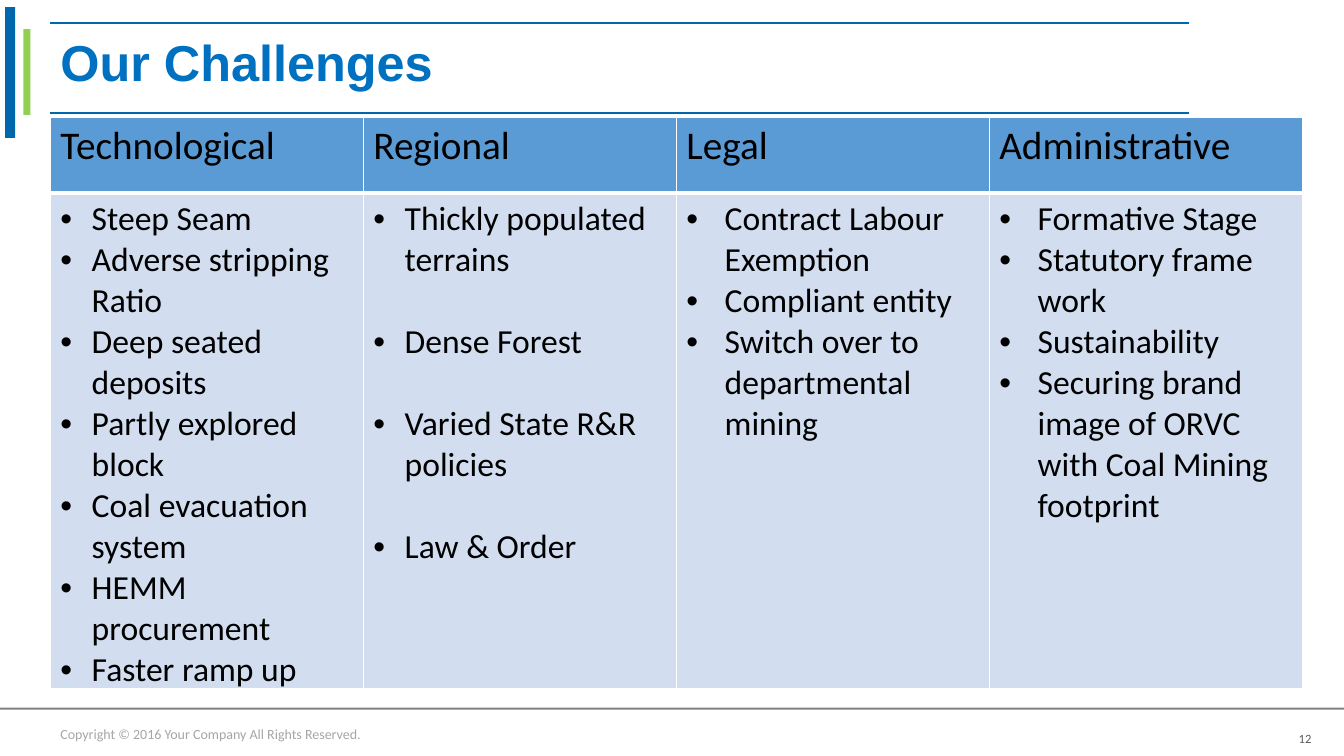
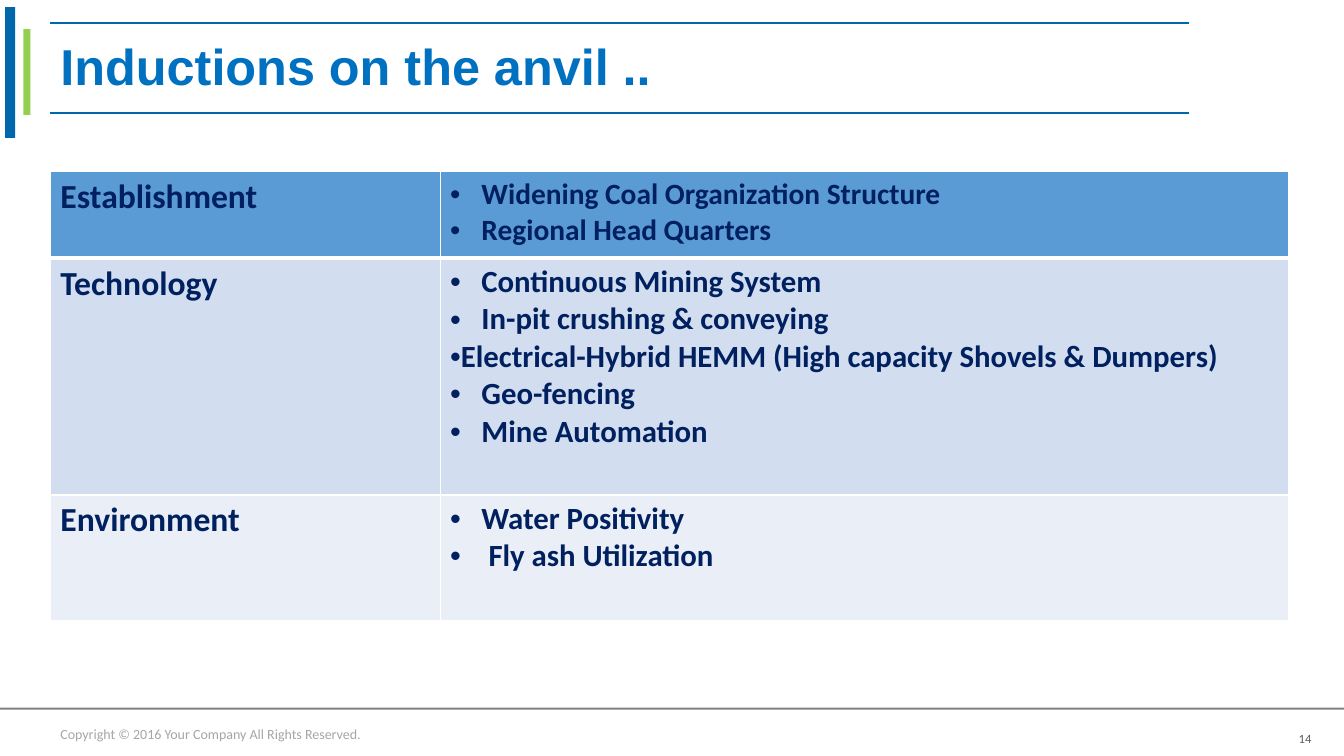
from lxml import etree
from pptx import Presentation, util as u
from pptx.dml.color import RGBColor
from pptx.enum import shapes, text
from pptx.oxml import ns

COLORS = {
    "blue": "0067AC", "green": "92D050", "rule": "808080", "title": "0070C0",
    "copyright": "A6A6A6", "number": "595959", "black": "000000", "navy": "002060",
    "white": "FFFFFF", "header": "5B9BD5", "band1": "D2DEEF", "band2": "EAEFF7",
}
RGB = {name: RGBColor.from_string(value) for name, value in COLORS.items()}
ROW_FILLS = ["header", "band1", "band2"]
LEFT = 3.75  # shared left margin, percent of slide width

prs = Presentation()
prs.slide_width, prs.slide_height = u.Inches(13.33), u.Inches(7.5)


def place(x, y, w, h):
    """Turn percentages of the slide's width and height into lengths."""
    W, H = prs.slide_width, prs.slide_height
    return [int(share * side / 100) for share, side in zip((x, y, w, h), (W, H, W, H))]


def style(p, font, size, color, bold=False):
    """Format every run of a paragraph."""
    for r in p.runs:
        r.font.name, r.font.size, r.font.bold = font, u.Pt(size), bold
        r.font.color.rgb = RGB[color]


# Shared decoration: percent boxes and colours
BARS = [
    ((1.73, 3.87, 0.53, 11.33), "green"),
    ((0.38, 0.93, 0.75, 17.33), "blue"),
    ((0, 93.6, 100, 0.27), "rule"),
]
TITLE_RULES = [3.07, 14.93]

# Hanging indents in inches; a cell is (text size, indent, space before, lines)
NARROW, WIDE = 0.31, 0.38
MARGINS = {"Electrical-Hybrid HEMM (High capacity Shovels & Dumpers)": (0.06, NARROW),
           "Fly ash Utilization": (WIDE, WIDE)}

SLIDES = [
    {
        "title": "Our Challenges", "title_top": 3.47, "number": "12",
        "top": 15.47, "cols": [93.15 / 4] * 4, "rows": [10.1, 65.5],
        "color": "black", "bold": False,
        "cells": [
            [(28, 0, 0, [name]) for name in
             ("Technological", "Regional", "Legal", "Administrative")],
            [
                (24, NARROW, 0, ["Steep Seam", "Adverse stripping Ratio",
                                 "Deep seated deposits", "Partly explored block",
                                 "Coal evacuation system", "HEMM procurement",
                                 "Faster ramp up"]),
                (24, NARROW, 29.3, ["Thickly populated terrains", "Dense Forest",
                                    "Varied State R&R policies", "Law & Order"]),
                (24, WIDE, 0, ["Contract Labour Exemption", "Compliant entity",
                               "Switch over to departmental mining"]),
                (24, WIDE, 0, ["Formative Stage", "Statutory frame work",
                               "Sustainability",
                               "Securing brand image of ORVC with Coal Mining footprint"]),
            ],
        ],
    },
    {
        "title": "Inductions on the anvil ..", "title_top": 4, "number": "14",
        "top": 22.67, "cols": [29, 63.1], "rows": [11.47, 31.33, 16.67],
        "color": "navy", "bold": True,
        "cells": [
            [(24, 0, 0, ["Establishment"]),
             (21, NARROW, 0, ["Widening Coal Organization Structure",
                              "Regional Head Quarters"])],
            [(24, 0, 0, ["Technology"]),
             (22, NARROW, 0, ["Continuous Mining System", "In-pit crushing & conveying",
                              "Electrical-Hybrid HEMM (High capacity Shovels & Dumpers)",
                              "Geo-fencing", "Mine Automation"])],
            [(24, 0, 0, ["Environment"]),
             (22, NARROW, 0, ["Water Positivity", "Fly ash Utilization"])],
        ],
    },
]

for page in SLIDES:
    s = prs.slides.add_slide(prs.slide_layouts[5])

    # Bars and rules
    for box, color in BARS:
        sp = s.shapes.add_shape(shapes.MSO_SHAPE.RECTANGLE, *place(*box))
        sp.shadow.inherit = False
        sp.fill.solid()
        sp.fill.fore_color.rgb = RGB[color]
        sp.line.fill.background()
    for y in TITLE_RULES:
        line = s.shapes.add_connector(shapes.MSO_CONNECTOR.STRAIGHT,
                                      *place(LEFT, y, 88.5, y))
        line.line.color.rgb, line.line.width = RGB["blue"], u.Pt(1.5)
        etree.SubElement(line._element.spPr, ns.qn("a:effectLst"))

    # Title
    sp = s.shapes.title
    sp.left, sp.top, sp.width, sp.height = place(LEFT, page["title_top"], 84.7, 10.27)
    tf = sp.text_frame
    tf.text = page["title"]
    tf.vertical_anchor = text.MSO_ANCHOR.MIDDLE
    p = tf.paragraphs[0]
    p.alignment, p.line_spacing = text.PP_ALIGN.LEFT, 0.9
    style(p, "Arial", 36, "title", True)

    # Footer: copyright line and page number
    tf = s.shapes.add_textbox(*place(LEFT, 95.33, 93.9, 3.6)).text_frame
    tf.word_wrap, tf.vertical_anchor = True, text.MSO_ANCHOR.MIDDLE
    tf.text = "Copyright © 2016 Your Company All Rights Reserved."
    style(tf.paragraphs[0], "Calibri", 10, "copyright")

    tf = s.shapes.add_textbox(*place(93.45, 95.6, 4.13, 3.33)).text_frame
    tf.word_wrap = True
    tf.margin_left = tf.margin_top = u.Inches(0.08)
    tf.margin_right = tf.margin_bottom = 0
    tf.text = page["number"]
    tf.paragraphs[0].alignment = text.PP_ALIGN.RIGHT
    style(tf.paragraphs[0], "Calibri", 9, "number")

    # Table grid
    cols, rows = page["cols"], page["rows"]
    table = s.shapes.add_table(len(rows), len(cols), *place(
        LEFT, page["top"], sum(cols), sum(rows))).table
    table.first_row = table.horz_banding = False
    for col, share in zip(table.columns, cols):
        col.width = place(0, 0, share, 0)[2]
    for row, share in zip(table.rows, rows):
        row.height = place(0, 0, 0, share)[3]

    for i, row in enumerate(page["cells"]):
        for j, (size, indent, gap, lines) in enumerate(row):
            cell = table.cell(i, j)

            # White borders, heavier under the header row, then the fill
            tcPr = cell._tc.get_or_add_tcPr()
            for side in "LRTB":
                heavy = (i, side) in ((0, "B"), (1, "T"))
                ln = etree.SubElement(tcPr, ns.qn("a:ln" + side),
                                      w=str(u.Pt(3 if heavy else 1)))
                fill = etree.SubElement(ln, ns.qn("a:solidFill"))
                etree.SubElement(fill, ns.qn("a:srgbClr"), val=COLORS["white"])
            cell.fill.solid()
            cell.fill.fore_color.rgb = RGB[ROW_FILLS[i]]

            # Text, bulleted where the cell has an indent
            tf = cell.text_frame
            tf.text = "\n".join(lines)
            for n, p in enumerate(tf.paragraphs):
                if indent:
                    margin, hang = MARGINS.get(lines[n], (indent, indent))
                    pPr = p._p.get_or_add_pPr()
                    pPr.set("marL", str(u.Inches(margin)))
                    pPr.set("indent", str(-u.Inches(hang)))
                    etree.SubElement(pPr, ns.qn("a:buFont"), typeface="Arial")
                    etree.SubElement(pPr, ns.qn("a:buChar"), char="•")
                if n and gap:
                    p.space_before = u.Pt(gap)
                style(p, "Calibri", size, page["color"], page["bold"])

prs.save("out.pptx")
